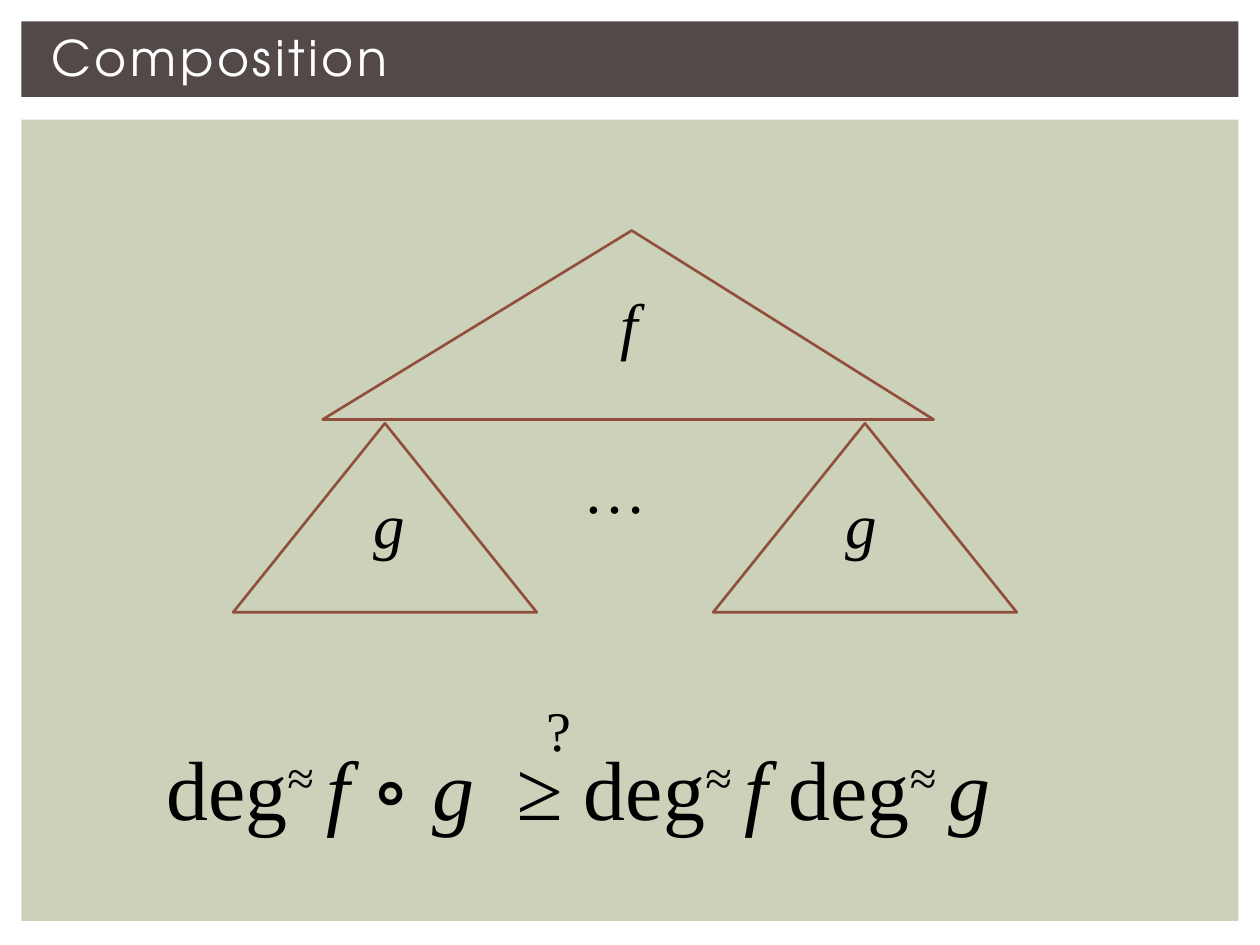
from dataclasses import dataclass

from pptx import Presentation
from pptx.dml.color import RGBColor
from pptx.enum.shapes import MSO_SHAPE
from pptx.enum.text import MSO_ANCHOR, MSO_AUTO_SIZE, PP_ALIGN
from pptx.util import Inches, Pt

RECTANGLE = MSO_SHAPE.RECTANGLE
TRIANGLE = MSO_SHAPE.ISOSCELES_TRIANGLE


@dataclass(frozen=True)
class Theme:
    heading_font: str = "TeX Gyre Adventor"
    math_font: str = "Times New Roman"
    header: RGBColor = RGBColor(0x53, 0x49, 0x49)
    panel: RGBColor = RGBColor(0xCC, 0xD1, 0xB9)
    outline: RGBColor = RGBColor(0x92, 0x4E, 0x3C)
    ink: RGBColor = RGBColor(0, 0, 0)
    white: RGBColor = RGBColor(255, 255, 255)
    heading_size: int = 28
    label_size: int = 36
    formula_size: int = 48
    question_size: int = 32


THEME = Theme()
SLIDE_WIDTH, SLIDE_HEIGHT = 10, 7.5
MARGIN = 0.17
BAND_WIDTH = SLIDE_WIDTH - 2 * MARGIN
BANDS = [(0.17, 0.6, THEME.header), (0.95, 6.36, THEME.panel)]  # top, height, fill

TITLE = "Composition"
LABEL_HEIGHT = 0.71
TRIANGLE_HEIGHT = 1.5
OUTER_TOP, INNER_TOP = 1.83, 3.36
INNER_LEFT, INNER_STEP, INNER_WIDTH = 1.85, 3.81, 2.41
TRIANGLES = [  # left, top, width, apex share
    (2.56, OUTER_TOP, 4.85, 0.506),
    *((INNER_LEFT + i * INNER_STEP, INNER_TOP, INNER_WIDTH, 0.5) for i in range(2)),
]
LABELS = [  # text, left, top, width, italic
    ("f", 4.83, 2.22, 0.31, True),
    ("g", 2.87, 3.8, 0.36, True),
    ("g", 6.61, 3.8, 0.36, True),
    ("…", 4.53, 3.53, 0.71, False),
]

APPROX_DEGREE = [("deg", {}), ("≈ ", {"baseline": "30000"})]
ITALIC = {"i": "1"}
WIDE_SPACE = {"i": "1", "spc": "1200"}
FORMULA = [
    *APPROX_DEGREE, ("f ", ITALIC), ("∘ ", {}), ("g", ITALIC), (" ", WIDE_SPACE), ("≥ ", ITALIC),
    *APPROX_DEGREE, ("f ", ITALIC),
    *APPROX_DEGREE, ("g", ITALIC),
]


def style(font, name, size, color):
    font.name, font.size = name, Pt(size)
    font.color.rgb = color


def add_runs(paragraph, runs):
    """Add (text, character attributes) pairs as runs."""
    for text, attributes in runs:
        run = paragraph.add_run()
        run.text = text
        properties = run.font._element
        for key, value in attributes.items():
            properties.set(key, value)


def add_math(shapes, runs, box, size):
    frame = shapes.add_textbox(*map(Inches, box)).text_frame
    frame.word_wrap = False
    frame.auto_size = MSO_AUTO_SIZE.SHAPE_TO_FIT_TEXT
    paragraph = frame.paragraphs[0]
    add_runs(paragraph, runs)
    style(paragraph.font, THEME.math_font, size, THEME.ink)


def add_bands(shapes):
    for top, height, fill in BANDS:
        band = shapes.add_shape(RECTANGLE, *map(Inches, (MARGIN, top, BAND_WIDTH, height)))
        band.shadow.inherit = False
        band.fill.solid()
        band.fill.fore_color.rgb = fill
        band.line.fill.background()


def set_title(shapes):
    title = shapes.title
    shapes._spTree.append(title._element)  # in front of the header band
    title.left, title.top, title.width, title.height = map(Inches, (0.31, 0.16, 9.4, 0.59))
    frame = title.text_frame
    frame.auto_size = MSO_AUTO_SIZE.NONE
    frame.vertical_anchor = MSO_ANCHOR.MIDDLE
    paragraph = frame.paragraphs[0]
    paragraph.alignment = PP_ALIGN.LEFT
    add_runs(paragraph, [(TITLE, {"spc": "200"})])
    style(paragraph.font, THEME.heading_font, THEME.heading_size, THEME.white)


def add_diagram(shapes):
    for left, top, width, apex in TRIANGLES:
        triangle = shapes.add_shape(TRIANGLE, *map(Inches, (left, top, width, TRIANGLE_HEIGHT)))
        triangle.adjustments[0] = apex
        triangle.shadow.inherit = False
        triangle.fill.background()
        triangle.line.color.rgb = THEME.outline
        triangle.line.width = Pt(1.5)
    for text, left, top, width, italic in LABELS:
        add_math(shapes, [(text, ITALIC if italic else {})],
                 (left, top, width, LABEL_HEIGHT), THEME.label_size)


def add_inequality(shapes):
    group = shapes.add_group_shape().shapes
    add_math(group, FORMULA, (1.22, 5.8, 7.32, 0.91), THEME.formula_size)
    add_math(group, [("?", {})], (4.24, 5.47, 0.36, 0.64), THEME.question_size)


def main():
    deck = Presentation()
    deck.slide_width, deck.slide_height = Inches(SLIDE_WIDTH), Inches(SLIDE_HEIGHT)
    shapes = deck.slides.add_slide(deck.slide_layouts[5]).shapes
    add_bands(shapes)
    set_title(shapes)
    add_diagram(shapes)
    add_inequality(shapes)
    deck.save("out.pptx")


if __name__ == "__main__":
    main()
